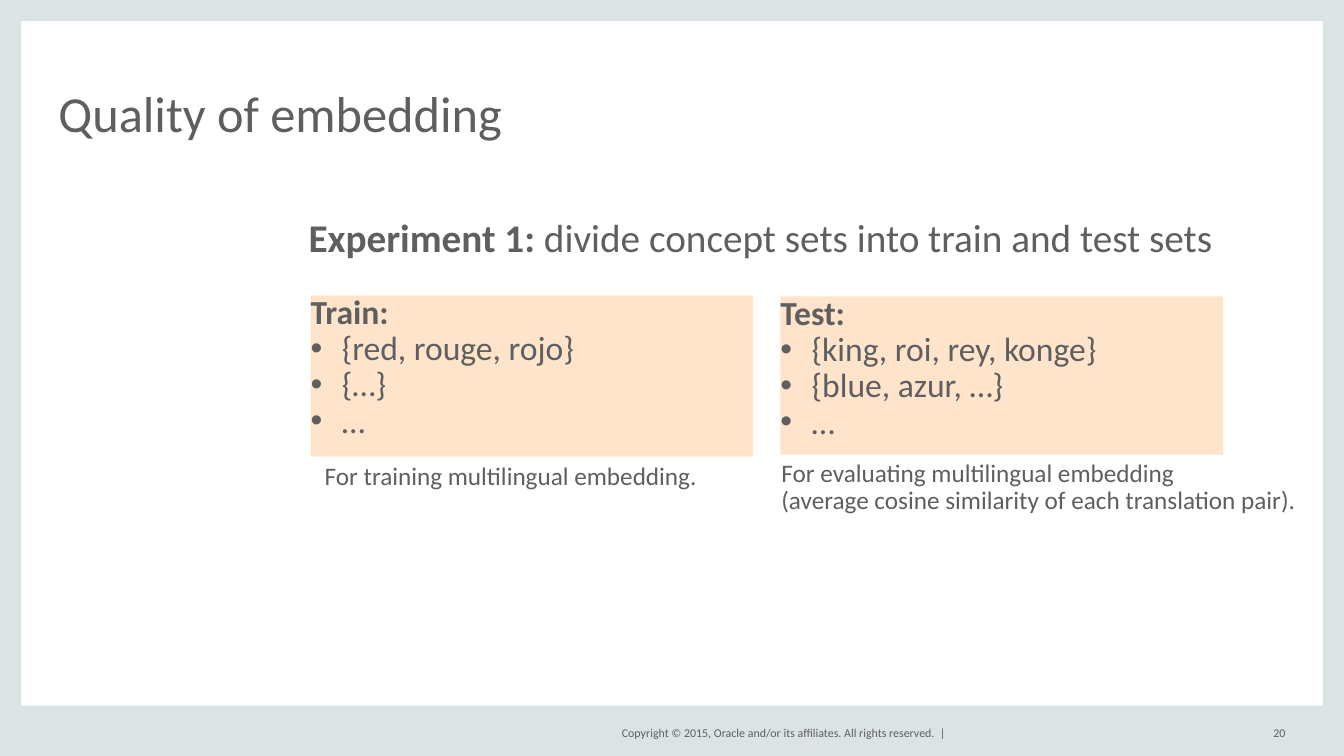
from dataclasses import dataclass

from lxml.etree import SubElement
from pptx import Presentation
from pptx.dml.color import RGBColor
from pptx.enum.shapes import MSO_SHAPE
from pptx.enum.text import MSO_ANCHOR, PP_ALIGN
from pptx.oxml.ns import qn
from pptx.util import Inches, Pt

GRAY = RGBColor(0x5F, 0x5F, 0x5F)
FRAME = RGBColor(0xDC, 0xE3, 0xE4)
PEACH = RGBColor(0xFF, 0xE4, 0xCC)
FONT = "Calibri"
WIDE, HIGH = 13.33, 7.5
EDGE, FOOT = 0.21, 0.5


@dataclass
class Box:
    left: float
    top: float
    width: float
    height: float

    def place(self) -> tuple:
        return tuple(Inches(n) for n in (self.left, self.top, self.width, self.height))


@dataclass
class Run:
    text: str
    bold: bool = False


@dataclass
class Line:
    runs: list[Run]
    bullet: bool = False


@dataclass
class Label:
    box: Box
    lines: list[Line]
    size: float
    space: float = 0.9
    align: PP_ALIGN = PP_ALIGN.LEFT
    anchor: MSO_ANCHOR = MSO_ANCHOR.TOP
    wrap: bool = False


@dataclass
class Card:
    box: Box
    head: str
    items: list[str]


def plain(*texts: str) -> list[Line]:
    return [Line([Run(text)]) for text in texts]


def add_bullet(para) -> None:
    props = para._p.get_or_add_pPr()
    props.set("marL", str(Inches(0.31)))
    props.set("indent", str(-Inches(0.31)))
    SubElement(props, qn("a:buFont"), typeface="Arial")
    SubElement(props, qn("a:buChar"), char="•")


def write(shape, label: Label) -> None:
    frame = shape.text_frame
    frame.margin_left = frame.margin_right = 0
    frame.margin_top = frame.margin_bottom = 0
    frame.word_wrap = label.wrap
    frame.vertical_anchor = label.anchor
    for row, line in enumerate(label.lines):
        para = frame.add_paragraph() if row else frame.paragraphs[0]
        if line.bullet:
            add_bullet(para)
        para.alignment = label.align
        para.line_spacing = label.space
        for part in line.runs:
            run = para.add_run()
            run.text = part.text
            run.font.name = FONT
            run.font.size = Pt(label.size)
            run.font.bold = part.bold
            run.font.color.rgb = GRAY


def add_label(slide, label: Label) -> None:
    write(slide.shapes.add_textbox(*label.box.place()), label)


def add_rect(slide, box: Box, color: RGBColor):
    rect = slide.shapes.add_shape(MSO_SHAPE.RECTANGLE, *box.place())
    rect.shadow.inherit = False
    rect.fill.solid()
    rect.fill.fore_color.rgb = color
    rect.line.fill.background()
    return rect


def add_card(slide, card: Card) -> None:
    lines = [Line([Run(card.head, True)])]
    lines += [Line([Run(item)], True) for item in card.items]
    write(add_rect(slide, card.box, PEACH), Label(card.box, lines, 24))


BORDERS = [
    Box(0, 0, EDGE, HIGH),
    Box(WIDE - EDGE, 0, EDGE, HIGH),
    Box(0, HIGH - FOOT, WIDE, FOOT),
    Box(0, 0, WIDE, EDGE),
]

LABELS = [
    Label(Box(5.88, 7.17, 3.5, 0.2),
          plain("Copyright © 2015, Oracle and/or its affiliates. All rights reserved.  |"),
          8.5, 1, PP_ALIGN.RIGHT, MSO_ANCHOR.MIDDLE),
    Label(Box(0.58, 0.44, 12.17, 0.97), plain("Quality of embedding"),
          36, 0.8, anchor=MSO_ANCHOR.BOTTOM, wrap=True),
    Label(Box(12.33, 7.17, 0.42, 0.2), plain("20"),
          8.5, 1, PP_ALIGN.RIGHT, MSO_ANCHOR.MIDDLE),
    Label(Box(3.06, 2.17, 9.69, 0.54),
          [Line([Run("Experiment 1: ", True),
                 Run("divide concept sets into train and test sets")])],
          28, wrap=True),
    Label(Box(3.22, 4.6, 3.94, 0.58), plain("For training multilingual embedding."), 18),
    Label(Box(7.75, 4.57, 5.14, 0.58),
          plain("For evaluating multilingual embedding",
                "(average cosine similarity of each translation pair)."), 18),
]

CARDS = [
    Card(Box(3.08, 2.93, 4.39, 1.6), "Train:", ["{red, rouge, rojo}", "{…}", "…"]),
    Card(Box(7.74, 2.94, 4.39, 1.57), "Test:",
         ["{king, roi, rey, konge}", "{blue, azur, …}", "…"]),
]


def main() -> None:
    deck = Presentation()
    deck.slide_width = Inches(WIDE)
    deck.slide_height = Inches(HIGH)
    slide = deck.slides.add_slide(deck.slide_layouts[6])
    for box in BORDERS:
        add_rect(slide, box, FRAME)
    for card in CARDS:
        add_card(slide, card)
    for label in LABELS:
        add_label(slide, label)
    deck.save("out.pptx")


if __name__ == "__main__":
    main()
